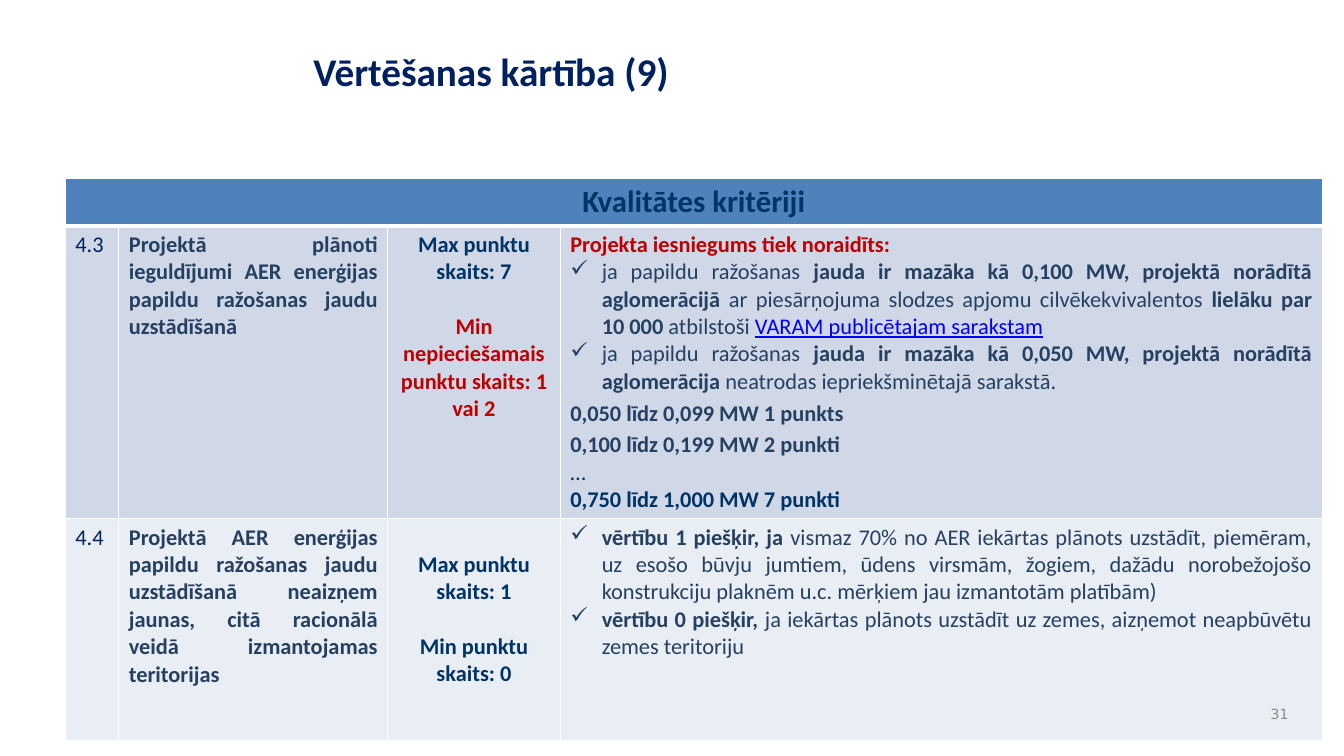
from lxml import etree
from pptx import Presentation
from pptx.dml.color import RGBColor
from pptx.enum import text as tx
from pptx.oxml import ns
from pptx.util import Pt

NAVY = RGBColor(0x00, 0x20, 0x60)
DEEP = RGBColor(0x00, 0x33, 0x66)
SLATE = RGBColor(0x25, 0x40, 0x61)
RED = RGBColor(0xC0, 0x00, 0x00)
BLUE = RGBColor(0x00, 0x00, 0xFF)
GRAY = RGBColor(0x89, 0x89, 0x89)
HEAD = RGBColor(0x4F, 0x81, 0xBD)
DARK = RGBColor(0xD0, 0xD8, 0xE8)
PALE = RGBColor(0xE9, 0xED, 0xF4)
LEFT, MID, RIGHT, JUST = (tx.PP_ALIGN.LEFT, tx.PP_ALIGN.CENTER,
                          tx.PP_ALIGN.RIGHT, tx.PP_ALIGN.JUSTIFY)
LINE = 19.5


def write(frame, text, size=16, color=SLATE, align=JUST, before=0,
          tick=False, link="", face="Calibri"):
    para = frame.paragraphs[0]
    if para.runs:
        para = frame.add_paragraph()
    if tick:
        props = para._p.get_or_add_pPr()
        props.set("marL", str(Pt(22.5)))
        props.set("indent", str(Pt(-22.5)))
        etree.SubElement(props, ns.qn("a:buChar")).set("char", "✓")
    para.alignment = align
    para.space_before = Pt(before)
    parts = [(part, i % 2 == 1, color) for i, part in enumerate(text.split("*"))]
    for part, bold, tint in parts + [(link, False, BLUE)]:
        if part:
            run = para.add_run()
            run.text = part
            font = run.font
            font.name, font.size, font.bold = face, Pt(size), bold
            font.color.rgb = tint
            font.underline = tint == BLUE


deck = Presentation()
deck.slide_width, deck.slide_height = Pt(960), Pt(540)
slide = deck.slides.add_slide(deck.slide_layouts[5])

title = slide.shapes.title
title.left, title.top, title.width, title.height = Pt(216.7), Pt(30.2), Pt(694.8), Pt(81.4)
title.text_frame.vertical_anchor = tx.MSO_ANCHOR.TOP
write(title.text_frame, "*Vērtēšanas kārtība (9)*", size=28, color=NAVY, align=LEFT)

table = slide.shapes.add_table(3, 4, Pt(46.7), Pt(127.4), Pt(897.8), Pt(399)).table
table.first_row = table.horz_banding = False
for col, width in zip(table.columns, (38.2, 192.2, 123.1, 544.3)):
    col.width = Pt(width)
for row, height in zip(table.rows, (33.6, 208.2, 158.4)):
    row.height = Pt(height)

for r, fill in enumerate((HEAD, DARK, PALE)):
    for c in range(4):
        cell = table.cell(r, c)
        props = cell._tc.get_or_add_tcPr()
        for side in "LRTB":
            thick = (r, side) in ((0, "B"), (1, "T"))
            edge = etree.SubElement(props, ns.qn("a:ln" + side))
            edge.set("w", str(Pt(3 if thick else 1)))
            paint = etree.SubElement(edge, ns.qn("a:solidFill"))
            etree.SubElement(paint, ns.qn("a:srgbClr")).set("val", "FFFFFF")
        cell.fill.solid()
        cell.fill.fore_color.rgb = fill

table.cell(0, 0).merge(table.cell(0, 3))
write(table.cell(0, 0).text_frame, "*Kvalitātes kritēriji*", size=22, color=DEEP, align=MID)

names = (
    ("4.3", "Projektā plānoti ieguldījumi AER enerģijas papildu ražošanas jaudu uzstādīšanā"),
    ("4.4", "Projektā AER enerģijas papildu ražošanas jaudu uzstādīšanā neaizņem jaunas, "
            "citā racionālā veidā izmantojamas teritorijas"),
)
for r, (number, name) in enumerate(names, 1):
    write(table.cell(r, 0).text_frame, number, color=NAVY, align=LEFT)
    write(table.cell(r, 1).text_frame, f"*{name}*")

table.cell(2, 2).margin_top = Pt(3.6 + LINE)
scores = (
    (1, "Max punktu skaits: 7", DEEP, 0),
    (1, "Min nepieciešamais punktu skaits: 1 vai 2", RED, LINE),
    (2, "Max punktu skaits: 1", DEEP, 0),
    (2, "Min punktu skaits: 0", DEEP, LINE),
)
for r, score, color, gap in scores:
    write(table.cell(r, 2).text_frame, f"*{score}*", color=color, align=MID, before=gap)

rules = table.cell(1, 3).text_frame
write(rules, "*Projekta iesniegums tiek noraidīts:*", color=RED, align=LEFT)
write(rules, "ja papildu ražošanas *jauda ir mazāka kā 0,100 MW, projektā norādītā "
      "aglomerācijā *ar piesārņojuma slodzes apjomu cilvēkekvivalentos "
      "*lielāku par 10 000 *atbilstoši ", tick=True, link="VARAM publicētajam sarakstam")
write(rules, "ja papildu ražošanas *jauda ir mazāka kā 0,050 MW, projektā norādītā "
      "aglomerācija* neatrodas iepriekšminētajā sarakstā.", tick=True)
write(rules, "*0,050 līdz 0,099 MW 1 punkts*", before=3.2)
write(rules, "*0,100 līdz 0,199 MW 2 punkti*", before=3.2)
write(rules, "…", color=DEEP)
write(rules, "*0,750 līdz 1,000 MW 7 punkti*", color=DEEP)

values = table.cell(2, 3).text_frame
write(values, "*vērtību 1 piešķir, ja *vismaz 70% no AER iekārtas plānots uzstādīt, piemēram, "
      "uz esošo būvju jumtiem, ūdens virsmām, žogiem, dažādu norobežojošo konstrukciju "
      "plaknēm u.c. mērķiem jau izmantotām platībām)", tick=True)
write(values, "*vērtību 0 piešķir, *ja iekārtas plānots uzstādīt uz zemes, aizņemot "
      "neapbūvētu zemes teritoriju", tick=True)

page = slide.shapes.add_textbox(Pt(895.7), Pt(498.2), Pt(31.7), Pt(23.8)).text_frame
page.word_wrap = True
page.vertical_anchor = tx.MSO_ANCHOR.MIDDLE
write(page, "31", size=10, color=GRAY, align=RIGHT, face="DejaVu Sans")

deck.save("out.pptx")
